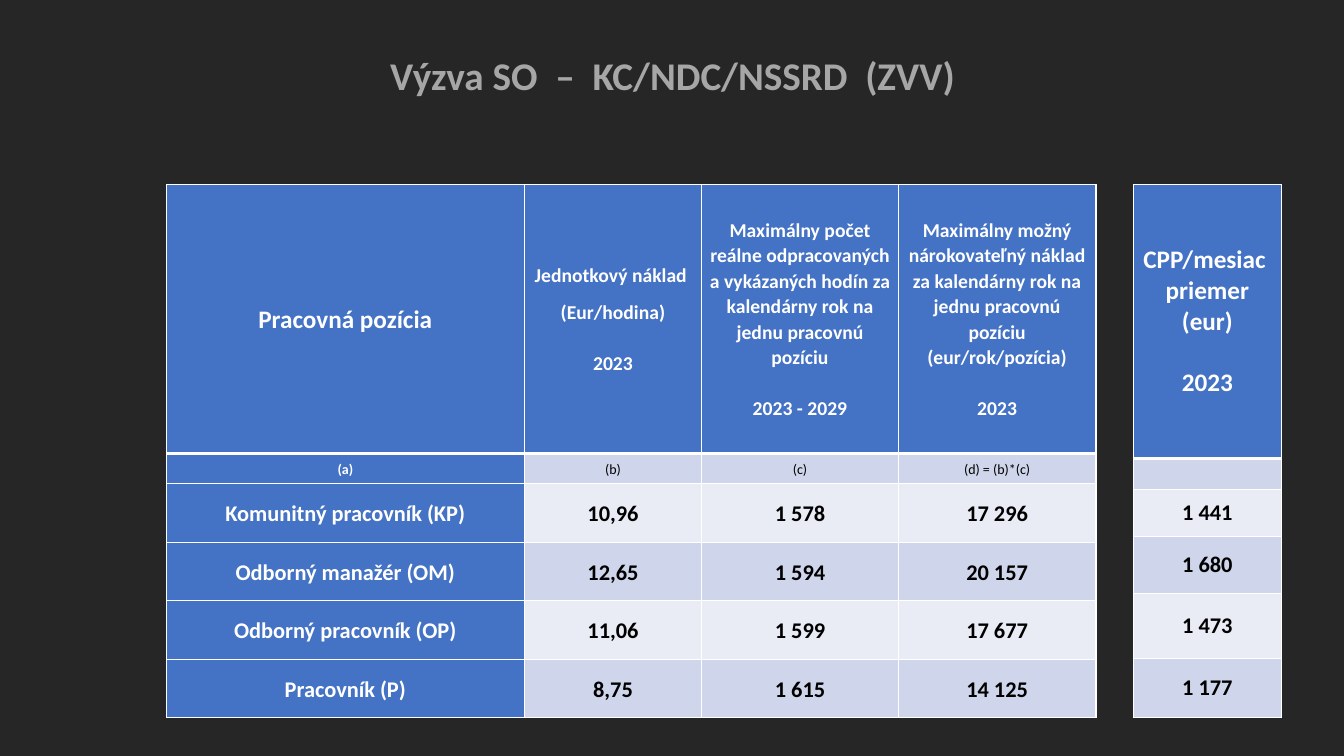
from lxml import etree
from pptx import Presentation
from pptx import util as u
from pptx.dml import color
from pptx.enum import text
from pptx.oxml import ns

BLUE, BAND, LIGHT = "4472C4", "CFD5EA", "E9EBF5"
WHITE, BLACK, GREY, DARK = "FFFFFF", "000000", "A6A6A6", "262626"


def rgb(value):
    return color.RGBColor.from_string(value)


def apply(obj, values):
    for name, value in values.items():
        setattr(obj, name, value)


class Deck:
    font = "Calibri"

    def __init__(self, width, height):
        self.prs = Presentation()
        self.prs.slide_width, self.prs.slide_height = u.Inches(width), u.Inches(height)
        self.s = self.prs.slides.add_slide(self.prs.slide_layouts[5])

    def background(self, fill):
        bg = self.s.background.fill
        bg.solid()
        bg.fore_color.rgb = rgb(fill)

    def paragraph(self, p, words, size, ink, bold=True, **layout):
        apply(p, {"alignment": text.PP_ALIGN.CENTER, **layout})
        r = p.add_run()
        r.text = words
        apply(r.font, {"name": self.font, "size": u.Pt(size), "bold": bold})
        r.font.color.rgb = rgb(ink)

    def title(self, words, box, size, ink):
        sp = self.s.shapes.title
        apply(sp, dict(zip(("left", "top", "width", "height"), map(u.Inches, box))))
        tf = sp.text_frame
        apply(tf, {"vertical_anchor": text.MSO_ANCHOR.MIDDLE, "word_wrap": True,
                   "auto_size": text.MSO_AUTO_SIZE.NONE})
        self.paragraph(tf.paragraphs[0], words, size, ink, line_spacing=0.9)

    def table(self, left, top, cols, rows):
        box = map(u.Inches, (left, top, sum(cols), sum(rows)))
        table = self.s.shapes.add_table(len(rows), len(cols), *box).table
        for col, width in zip(table.columns, cols):
            col.width = u.Inches(width)
        for row, height in zip(table.rows, rows):
            row.height = u.Inches(height)
        return table

    def cell(self, cell, paragraphs, style, fill, margins, top=1, bottom=1):
        """Fill one cell; each paragraph is (words, layout)."""
        apply(cell, {"vertical_anchor": text.MSO_ANCHOR.MIDDLE})
        sides = ("margin_left", "margin_top", "margin_right", "margin_bottom")
        apply(cell, dict(zip(sides, map(u.Inches, margins))))
        cell.fill.solid()
        cell.fill.fore_color.rgb = rgb(fill)
        tf = cell.text_frame
        for i, (words, layout) in enumerate(paragraphs):
            p = tf.add_paragraph() if i else tf.paragraphs[0]
            self.paragraph(p, words, **{**style, **layout})
        tcPr = cell._tc.get_or_add_tcPr()
        for i, (side, width) in enumerate(zip("LRTB", (1, 1, top, bottom))):
            ln = etree.Element(ns.qn(f"a:ln{side}"), w=str(u.Pt(width)))
            solid = etree.SubElement(ln, ns.qn("a:solidFill"))
            etree.SubElement(solid, ns.qn("a:srgbClr"), val=WHITE)
            tcPr.insert(i, ln)


def edges(row):
    """Thick rule between the header and the body."""
    return {"top": 3 if row == 1 else 1, "bottom": 3 if row == 0 else 1}


def main():
    deck = Deck(13.33, 7.5)
    deck.background(DARK)
    deck.title("Výzva SO  –  KC/NDC/NSSRD  (ZVV)", (0.92, 0.22, 11.5, 1.1), 28, GREY)

    # Unit costs by position
    gap = {"space_before": u.Pt(18.3)}
    header = [
        [("Pracovná pozícia", {"size": 18})],
        [("Jednotkový náklad ", {"space_after": u.Pt(8)}), ("(Eur/hodina)", {}), ("2023", gap)],
        [("Maximálny počet reálne odpracovaných a vykázaných hodín za "
          "kalendárny rok na jednu pracovnú pozíciu", {}), ("2023 - 2029", gap)],
        [("Maximálny možný nárokovateľný náklad za kalendárny rok na "
          "jednu pracovnú pozíciu (eur/rok/pozícia)", {}), ("2023", gap)],
    ]
    body = [
        ("(a)", "(b)", "(c)", "(d) = (b)*(c)"),
        ("Komunitný pracovník (KP)", "10,96", "1 578", "17 296"),
        ("Odborný manažér (OM)", "12,65", "1 594", "20 157"),
        ("Odborný pracovník (OP)", "11,06", "1 599", "17 677"),
        ("Pracovník (P)", "8,75", "1 615", "14 125"),
    ]
    rows = [header] + [[[(words, {})] for words in row] for row in body]
    sizes = [14, 10] + [16] * 4
    costs = deck.table(1.65, 1.83, (3.55, 1.76, 1.95, 1.96), [2.67, 0.3] + [0.58] * 4)
    for i, row in enumerate(rows):
        for j, paragraphs in enumerate(row):
            head = i == 0 or j == 0
            style = {"size": sizes[i], "ink": WHITE if head else BLACK,
                     "bold": head or i > 1, "line_spacing": 1.07}
            fill = BLUE if head else (BAND if i % 2 else LIGHT)
            deck.cell(costs.cell(i, j), paragraphs, style, fill, (0.05, 0, 0.05, 0), **edges(i))

    # Average monthly total labour cost
    monthly = [
        [("CPP/mesiac", {"alignment": text.PP_ALIGN.LEFT}), ("priemer", {}), ("(eur)", {}),
         ("2023", {"space_before": u.Pt(22)})],
        [],
    ] + [[(words, {})] for words in ("1 441", "1 680", "1 473", "1 177")]
    averages = deck.table(11.24, 1.83, (1.47,), (2.72, 0.31, 0.46, 0.57, 0.64, 0.59))
    for i, paragraphs in enumerate(monthly):
        style = {"size": 16 if i else 18, "ink": BLACK if i else WHITE}
        fill = (BAND if i % 2 else LIGHT) if i else BLUE
        margins = (0.1, 0.05, 0.1, 0.05) if paragraphs else (0.1, 0, 0.1, 0)
        deck.cell(averages.cell(i, 0), paragraphs, style, fill, margins, **edges(i))

    deck.prs.save("out.pptx")


if __name__ == "__main__":
    main()
